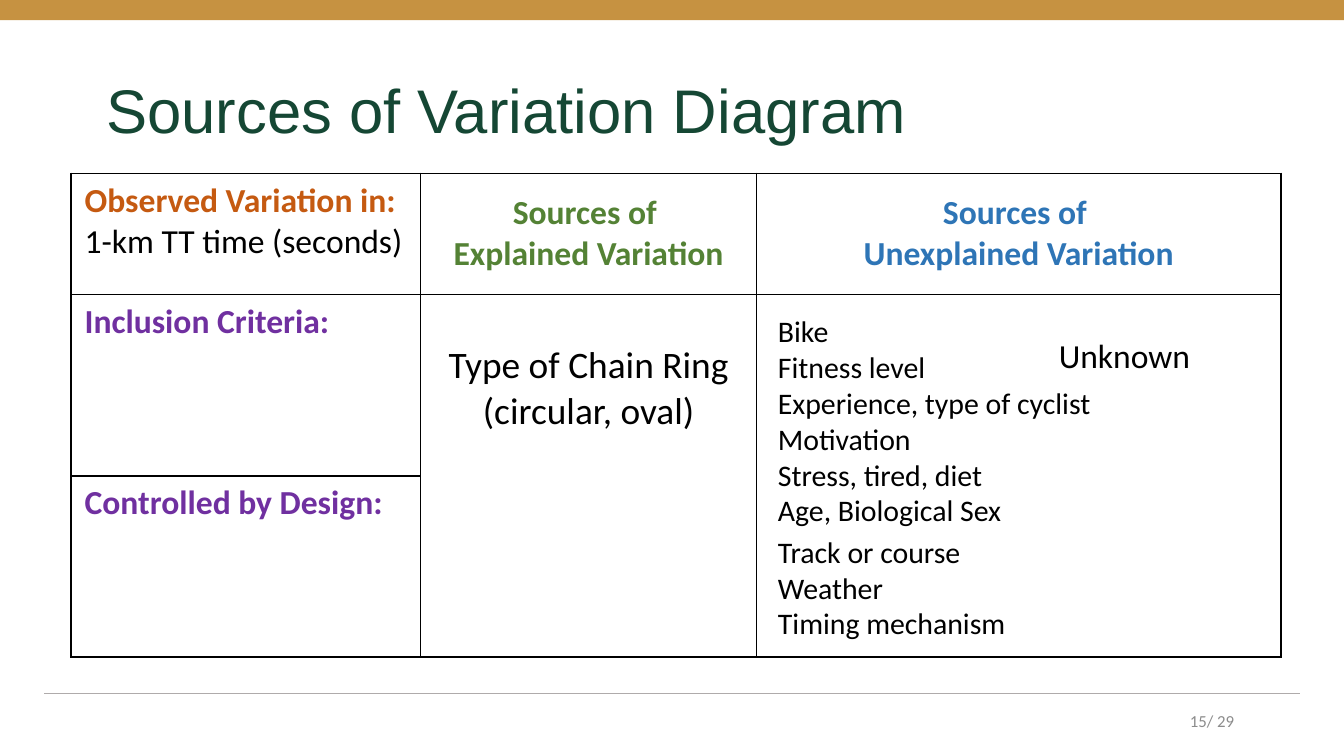
from lxml.etree import SubElement
from pptx import Presentation
from pptx.dml.color import RGBColor
from pptx.enum.shapes import MSO_CONNECTOR, MSO_SHAPE
from pptx.enum.text import MSO_ANCHOR, PP_ALIGN
from pptx.oxml.ns import qn
from pptx.util import Inches, Pt


def rgb(color):
    return RGBColor.from_string(color)


def write(frame, lines, align=PP_ALIGN.LEFT):
    """Write one paragraph per (text, size, color, bold) line."""
    frame.word_wrap = True
    for i, (text, size, color, bold) in enumerate(lines):
        paragraph = frame.paragraphs[0] if i == 0 else frame.add_paragraph()
        paragraph.alignment = align
        run = paragraph.add_run()
        run.text = text
        run.font.name = "Calibri"
        run.font.size = Pt(size)
        run.font.bold = bold
        run.font.color.rgb = rgb(color)


# Widescreen, 16:9
prs = Presentation()
prs.slide_width = Inches(10)
prs.slide_height = Inches(10) * 9 // 16
slide = prs.slides.add_slide(prs.slide_layouts[5])
shapes = slide.shapes

# Top band and footer rule
band = shapes.add_shape(MSO_SHAPE.RECTANGLE, 0, 0, Inches(10), Inches(0.15))
band.shadow.inherit = False
band.fill.solid()
band.fill.fore_color.rgb = rgb("C69241")
band.line.fill.background()

footer_rule = shapes.add_connector(
    MSO_CONNECTOR.STRAIGHT, Inches(0.33), Inches(5.16), Inches(9.67), Inches(5.16))
footer_rule.line.color.rgb = rgb("AFABAB")
footer_rule.line.width = Pt(0.5)
SubElement(footer_rule._element.spPr, qn("a:effectLst"))

# Title
title = shapes.title
title.left, title.top = Inches(0.69), Inches(0.3)
title.width, title.height = Inches(8.62), Inches(1.09)
title.text_frame.vertical_anchor = MSO_ANCHOR.MIDDLE
heading = title.text_frame.paragraphs[0]
heading.alignment = PP_ALIGN.LEFT
heading.line_spacing = 0.9
heading_run = heading.add_run()
heading_run.text = "Sources of Variation Diagram"
heading_run.font.name = "Arial"
heading_run.font.size = Pt(33)
heading_run.font.color.rgb = rgb("154734")

# Diagram table
diagram = shapes.add_table(
    3, 3, Inches(0.53), Inches(1.29), Inches(9), Inches(3.6)).table
diagram.first_row = False
diagram.horz_banding = False
for column, width in zip(diagram.columns, (2.6, 2.5, 3.9)):
    column.width = Inches(width)
for row, height in zip(diagram.rows, (0.9, 1.35, 1.35)):
    row.height = Inches(height)

for cell in diagram.iter_cells():
    properties = cell._tc.get_or_add_tcPr()
    for side in ("a:lnL", "a:lnR", "a:lnT", "a:lnB"):
        border = SubElement(properties, qn(side), w=str(Pt(1)))
        border_fill = SubElement(border, qn("a:solidFill"))
        SubElement(border_fill, qn("a:srgbClr"), val="000000")
    cell.fill.background()

for col in (1, 2):
    diagram.cell(1, col).merge(diagram.cell(2, col))

write(diagram.cell(0, 0).text_frame, [
    ("Observed Variation in:", 18, "C55A11", True),
    ("1-km TT time (seconds)", 18, "000000", False)])
for col, kind, color in ((1, "Explained", "548235"), (2, "Unexplained", "2E75B6")):
    source_header = diagram.cell(0, col)
    source_header.vertical_anchor = MSO_ANCHOR.MIDDLE
    write(source_header.text_frame, [
        ("Sources of ", 18, color, True),
        (f"{kind} Variation", 18, color, True)], PP_ALIGN.CENTER)
for row, label in ((1, "Inclusion Criteria:"), (2, "Controlled by Design:")):
    write(diagram.cell(row, 0).text_frame, [(label, 18, "7030A0", True)])

explained = diagram.cell(1, 1)
explained.margin_top = Inches(0.36)
write(explained.text_frame, [
    ("Type of Chain Ring (circular, oval)", 20, "000000", False)], PP_ALIGN.CENTER)

# Unexplained sources, laid over the last column
rider_factors = ["Bike", "Fitness level", "Experience, type of cyclist",
                 "Motivation", "Stress, tired, diet", "Age, Biological Sex"]
setting_factors = ["Track or course", "Weather", "Timing mechanism"]
for factors, left, top, width, height, size in (
        (rider_factors, 5.69, 2.28, 3.32, 1.72, 16),
        (setting_factors, 5.69, 3.92, 3.32, 0.94, 16),
        (["Unknown"], 7.78, 2.44, 1.63, 0.4, 18)):
    factor_list = shapes.add_textbox(
        Inches(left), Inches(top), Inches(width), Inches(height))
    write(factor_list.text_frame,
          [(factor, size, "000000", False) for factor in factors])

# Page number
page_number = shapes.add_textbox(
    Inches(7.06), Inches(5.21), Inches(2.25), Inches(0.3))
page_number.text_frame.vertical_anchor = MSO_ANCHOR.MIDDLE
write(page_number.text_frame, [("15/ 29 ", 9, "8C8C8C", False)], PP_ALIGN.RIGHT)

prs.save("out.pptx")
